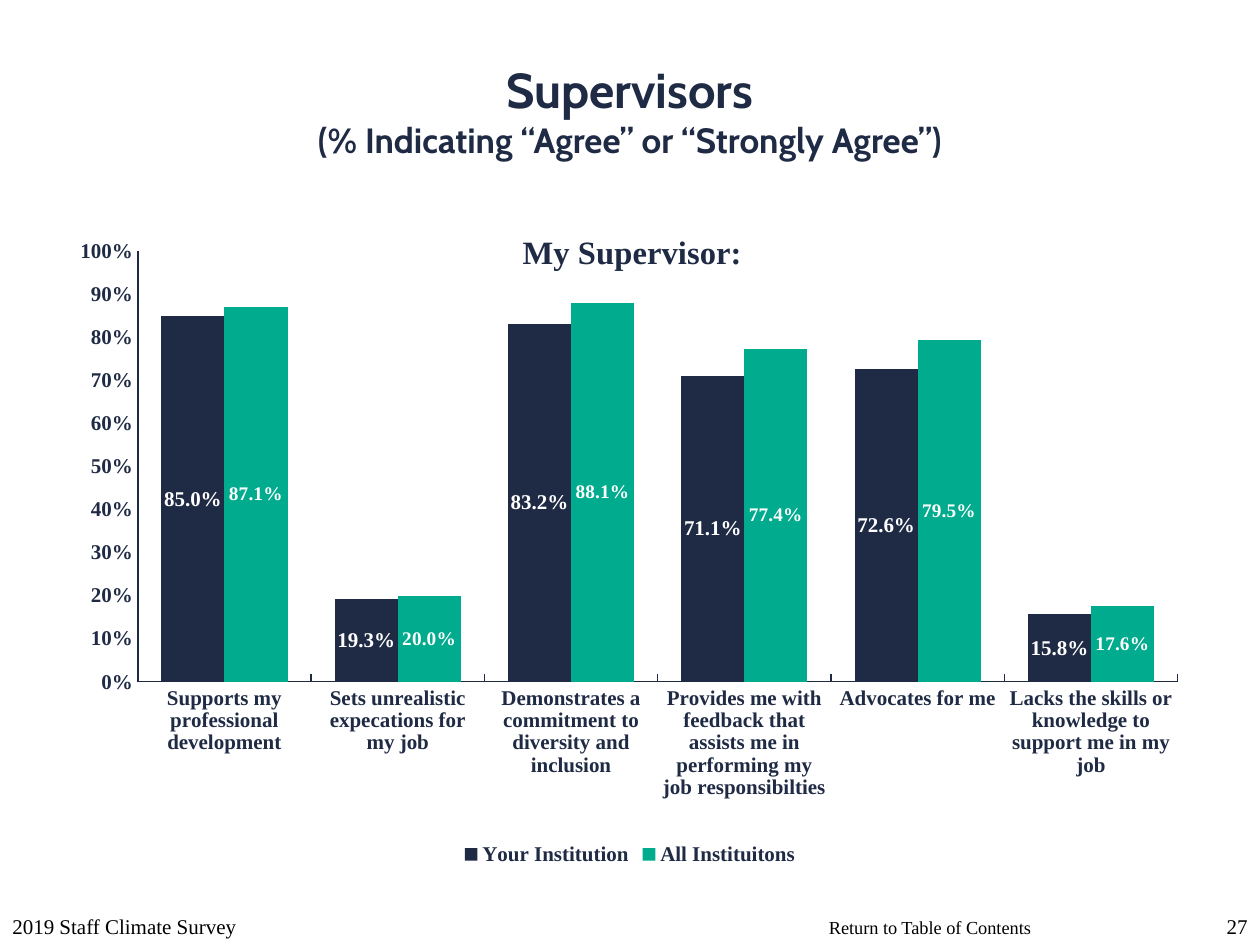
from dataclasses import dataclass

from pptx import Presentation
from pptx.chart.data import CategoryChartData
from pptx.dml.color import RGBColor
from pptx.enum.chart import XL_CHART_TYPE as ChartType
from pptx.enum.chart import XL_LABEL_POSITION as LabelPos
from pptx.enum.chart import XL_LEGEND_POSITION as LegendPos
from pptx.enum.chart import XL_TICK_MARK as Tick
from pptx.enum.text import MSO_ANCHOR as Anchor
from pptx.enum.text import PP_ALIGN as Align
from pptx.oxml import parse_xml
from pptx.oxml.ns import nsdecls
from pptx.util import Inches, Pt

COLORS = {"navy": "1F2A44", "green": "00AB8E", "white": "FFFFFF", "black": "000000"}
HEADING, BODY = "Cabin", "Times New Roman"

QUESTIONS = [
    "Supports my professional development",
    "Sets unrealistic expecations for my job",
    "Demonstrates a commitment to diversity and inclusion",
    "Provides me with feedback that assists me in performing my job responsibilties",
    "Advocates for me",
    "Lacks the skills or knowledge to support me in my job",
]
RATINGS = [
    ("Your Institution", (0.85, 0.193, 0.832, 0.711, 0.726, 0.158), "navy", 12),
    ("All Instituitons", (0.871, 0.2, 0.881, 0.774, 0.795, 0.176), "green", 11),
]


@dataclass
class SurveySlide:
    slide: object

    def style(self, font, size, color="navy", bold=True, face=BODY):
        font.name, font.size, font.bold = face, Pt(size), bold
        font.color.rgb = RGBColor.from_string(COLORS[color])

    def text_frame(self, box, anchor, wrap=True):
        frame = self.slide.shapes.add_textbox(*map(Inches, box)).text_frame
        frame.word_wrap, frame.vertical_anchor = wrap, anchor
        return frame

    def title(self, box, heading, subheading):
        paragraph = self.text_frame(box, Anchor.MIDDLE).paragraphs[0]
        paragraph.alignment = Align.CENTER
        main = paragraph.add_run()
        main.text = heading
        self.style(main.font, 28, face=HEADING)
        paragraph.add_line_break()
        detail = paragraph.add_run()
        detail.text = subheading
        self.style(detail.font, 20, face=HEADING)

    def footer(self, box, text, size=12, align=Align.LEFT, anchor=Anchor.BOTTOM, wrap=True):
        paragraph = self.text_frame(box, anchor, wrap).paragraphs[0]
        paragraph.text, paragraph.alignment = text, align
        self.style(paragraph.font, size, "black", bold=False)

    def place(self, parent, x, y, w=None, h=None):
        sizes = "" if w is None else f'<c:w val="{w}"/><c:h val="{h}"/>'
        target = "" if w is None else '<c:layoutTarget val="inner"/>'
        for old in parent.findall("{*}layout"):
            parent.remove(old)
        return parse_xml(
            f'<c:layout {nsdecls("c")}><c:manualLayout>{target}'
            '<c:xMode val="edge"/><c:yMode val="edge"/>'
            f'<c:x val="{x}"/><c:y val="{y}"/>{sizes}</c:manualLayout></c:layout>'
        )

    def axis(self, axis, tick):
        axis.has_major_gridlines = False
        axis.major_tick_mark, axis.minor_tick_mark = tick, Tick.NONE
        axis.format.line.width = Pt(0.75)
        axis.format.line.color.rgb = RGBColor.from_string(COLORS["navy"])
        self.style(axis.tick_labels.font, 12)

    def column_chart(self, box, heading, categories, ratings):
        data = CategoryChartData(number_format="0.0%")
        data.categories = categories
        for name, values, _, _ in ratings:
            data.add_series(name, values)
        chart = self.slide.shapes.add_chart(
            ChartType.COLUMN_CLUSTERED, *map(Inches, box), data
        ).chart
        self.style(chart.font, 10)

        title = chart.chart_title
        title.text_frame.text = heading
        self.style(title.text_frame.paragraphs[0].font, 18.6)
        title.include_in_layout = True
        title_xml = title._element
        title_xml.insert(1, self.place(title_xml, 0.4, 0.04))

        self.axis(chart.category_axis, Tick.INSIDE)
        self.axis(chart.value_axis, Tick.NONE)
        chart.value_axis.minimum_scale, chart.value_axis.maximum_scale = 0, 1
        chart.value_axis.major_unit = 0.1
        chart.value_axis.tick_labels.number_format = "0%"
        chart.value_axis.tick_labels.number_format_is_linked = False

        plot = chart.plots[0]
        plot.gap_width, plot.overlap, plot.vary_by_categories = 75, 0, False
        for series, (_, _, color, size) in zip(plot.series, ratings):
            series.format.fill.solid()
            series.format.fill.fore_color.rgb = RGBColor.from_string(COLORS[color])
            labels = series.data_labels
            labels.show_value, labels.position = True, LabelPos.CENTER
            labels.number_format, labels.number_format_is_linked = "0.0%", False
            self.style(labels.font, size, "white")
        area = chart._chartSpace.chart.plotArea
        area.insert(0, self.place(area, 0.066, 0.078, 0.917, 0.641))

        chart.has_legend = True
        chart.legend.position = LegendPos.BOTTOM
        chart.legend.include_in_layout = False
        self.style(chart.legend.font, 12)


def main():
    deck = Presentation()
    deck.slide_width, deck.slide_height = Inches(10), Inches(7.5)
    page = SurveySlide(deck.slides.add_slide(deck.slide_layouts[6]))
    page.footer((6.48, 7.22, 1.82, 0.28), "Return to Table of Contents", 10.5,
                anchor=Anchor.TOP, wrap=False)
    page.title((0, 0.25, 10, 1.25), "Supervisors",
               "(% Indicating “Agree” or “Strongly Agree”)")
    page.column_chart((0.5, 1.58, 9, 5.33), "My Supervisor:", QUESTIONS, RATINGS)
    page.footer((0, 7, 3.17, 0.5), "2019 Staff Climate Survey")
    page.footer((9.5, 7, 0.5, 0.5), "27", align=Align.RIGHT)
    deck.save("out.pptx")


if __name__ == "__main__":
    main()
